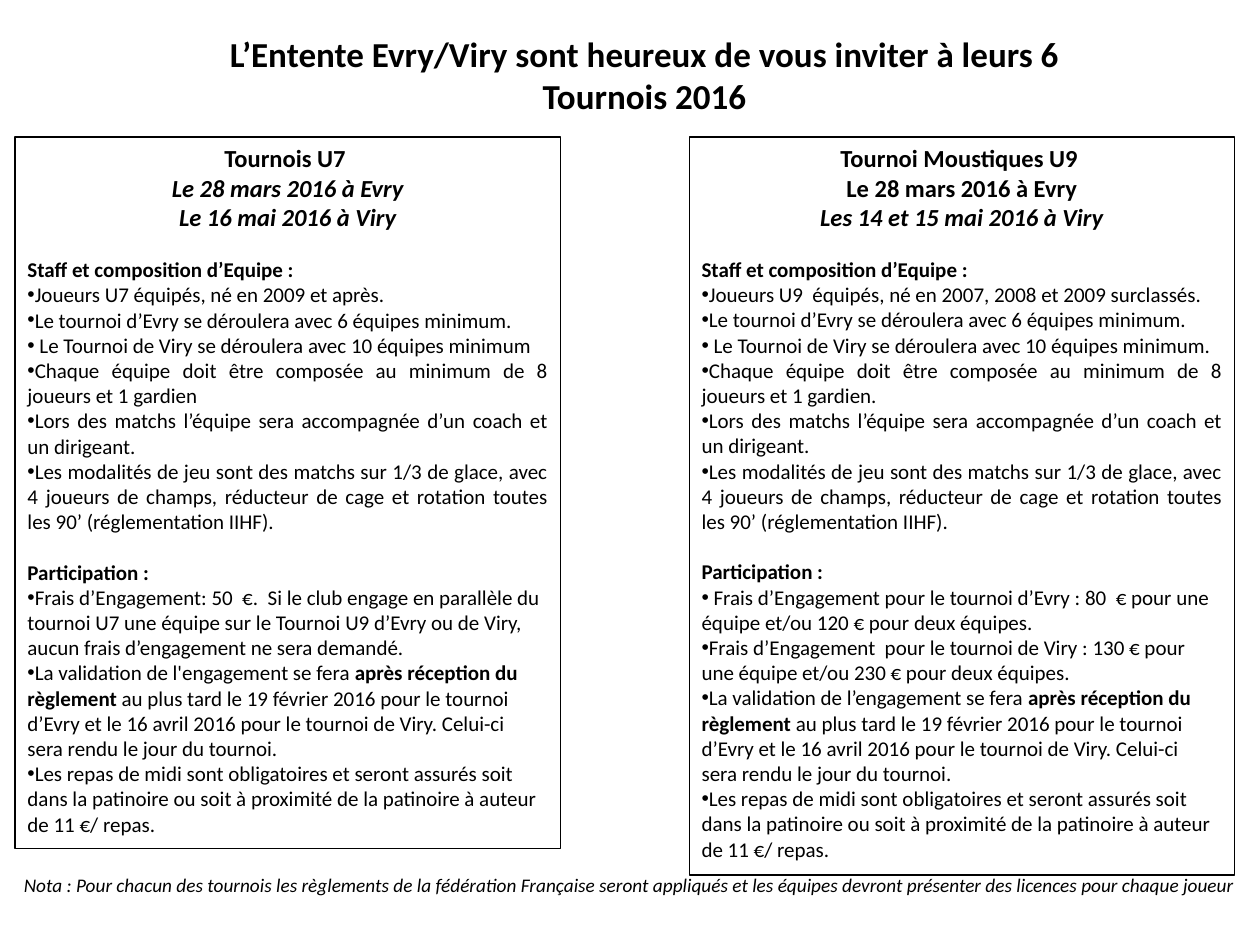
from lxml import etree
from pptx import Presentation
from pptx import util as u
from pptx.dml.color import RGBColor
from pptx.enum import shapes, text
from pptx.oxml.ns import qn

COLORS = {"ink": "000000"}
INK = RGBColor.from_string(COLORS["ink"])
CENTER, LEFT, JUSTIFY = text.PP_ALIGN.CENTER, text.PP_ALIGN.LEFT, text.PP_ALIGN.JUSTIFY

# Paragraph styles: alignment, bullet, space before in points, font values
STYLES = {
    "title": (CENTER, False, 0, {"size": u.Pt(20), "bold": True}),
    "note": (CENTER, False, 0, {"size": u.Pt(11), "italic": True}),
    "heading": (CENTER, False, 0, {"size": u.Pt(14), "bold": True}),
    "date": (CENTER, False, 0, {"size": u.Pt(14), "bold": True, "italic": True}),
    "section": (LEFT, False, 14.4, {"size": u.Pt(12), "bold": True}),
    "rule": (JUSTIFY, True, 0, {"size": u.Pt(12)}),
    "fee": (LEFT, True, 0, {"size": u.Pt(12)}),
}


def write(shape, lines):
    """Fill a shape with (style, wording) lines; ** marks switch bold on and off."""
    frame = shape.text_frame
    frame.word_wrap = True
    frame.auto_size = text.MSO_AUTO_SIZE.SHAPE_TO_FIT_TEXT
    frame.vertical_anchor = text.MSO_ANCHOR.TOP
    for index, (style, wording) in enumerate(lines):
        paragraph = frame.add_paragraph() if index else frame.paragraphs[0]
        alignment, bullet, before, font = STYLES[style]
        paragraph.alignment = alignment
        paragraph.space_before = u.Pt(before)
        if bullet:
            properties = paragraph._p.get_or_add_pPr()
            etree.SubElement(properties, qn("a:buFont")).set("typeface", "Arial")
            etree.SubElement(properties, qn("a:buChar")).set("char", "•")
        for part, piece in enumerate(wording.split("**")):
            run = paragraph.add_run()
            run.text = piece
            run.font.color.rgb = INK
            values = {"name": "Calibri", "bold": False, "italic": False} | font
            if part % 2:
                values["bold"] = True
            for name, value in values.items():
                setattr(run.font, name, value)


presentation = Presentation()
presentation.slide_width, presentation.slide_height = u.Inches(10), u.Inches(7.5)
slide = presentation.slides.add_slide(presentation.slide_layouts[6])
width, height = presentation.slide_width, presentation.slide_height

tournaments = [
    {
        "left": 0.547,
        "height": 0.781,
        "heading": [
            ("heading", "Tournoi Moustiques U9 "),
            ("heading", "Le 28 mars 2016 à Evry"),
            ("date", "Les 14 et 15 mai 2016 à Viry"),
        ],
        "players": "Joueurs U9  équipés, né en 2007, 2008 et 2009 surclassés.",
        "stop": ".",
        "fees": [
            " Frais d’Engagement pour le tournoi d’Evry : 80  € pour une équipe et/ou 120 € pour deux équipes.",
            "Frais d’Engagement  pour le tournoi de Viry : 130 € pour une équipe et/ou 230 € pour deux équipes.",
        ],
        "apostrophe": "’",
    },
    {
        "left": 0.012,
        "height": 0.753,
        "heading": [
            ("heading", "Tournois U7 "),
            ("date", "Le 28 mars 2016 à Evry"),
            ("date", "Le 16 mai 2016 à Viry"),
        ],
        "players": "Joueurs U7 équipés, né en 2009 et après.",
        "stop": "",
        "fees": [
            "Frais d’Engagement: 50  €.  Si le club engage en parallèle du tournoi U7 une équipe "
            "sur le Tournoi U9 d’Evry ou de Viry, aucun frais d’engagement ne sera demandé.",
        ],
        "apostrophe": "'",
    },
]

for tournament in tournaments:
    stop = tournament["stop"]
    rules = [
        tournament["players"],
        "Le tournoi d’Evry se déroulera avec 6 équipes minimum.",
        f" Le Tournoi de Viry se déroulera avec 10 équipes minimum{stop}",
        f"Chaque équipe doit être composée au minimum de 8 joueurs et 1 gardien{stop}",
        "Lors des matchs l’équipe sera accompagnée d’un coach et un dirigeant.",
        "Les modalités de jeu sont des matchs sur 1/3 de glace, avec 4 joueurs de champs, "
        "réducteur de cage et rotation toutes les 90’ (réglementation IIHF).",
    ]
    fees = tournament["fees"] + [
        f"La validation de l{tournament['apostrophe']}engagement se fera **après réception du règlement** "
        "au plus tard le 19 février 2016 pour le tournoi d’Evry et le 16 avril 2016 "
        "pour le tournoi de Viry. Celui-ci  sera rendu le jour du tournoi.",
        "Les repas de midi sont obligatoires et seront assurés soit dans la patinoire "
        "ou soit à proximité de la patinoire à auteur de 11 €/ repas.",
    ]
    box = slide.shapes.add_shape(
        shapes.MSO_SHAPE.RECTANGLE,
        int(tournament["left"] * width), int(0.145 * height),
        int(0.433 * width), int(tournament["height"] * height))
    box.shadow.inherit = False
    box.fill.background()
    box.line.color.rgb = INK
    box.line.width = u.Pt(0.75)
    write(box, [
        *tournament["heading"],
        ("section", "Staff et composition d’Equipe :"),
        *[("rule", rule) for rule in rules],
        ("section", "Participation :"),
        *[("fee", fee) for fee in fees],
    ])

# Banners: style, left, top, width and height as shares of the slide, wording
banners = [
    ("title", 0.169, 0.028, 0.685, 0.103,
     "L’Entente Evry/Viry sont heureux de vous inviter à leurs 6 Tournois 2016"),
    ("note", 0, 0.917, 1, 0.039,
     "Nota : Pour chacun des tournois les règlements de la fédération Française seront appliqués "
     "et les équipes devront présenter des licences pour chaque joueur"),
]
for style, left, top, wide, high, wording in banners:
    banner = slide.shapes.add_textbox(
        int(left * width), int(top * height), int(wide * width), int(high * height))
    write(banner, [(style, wording)])

presentation.save("out.pptx")
